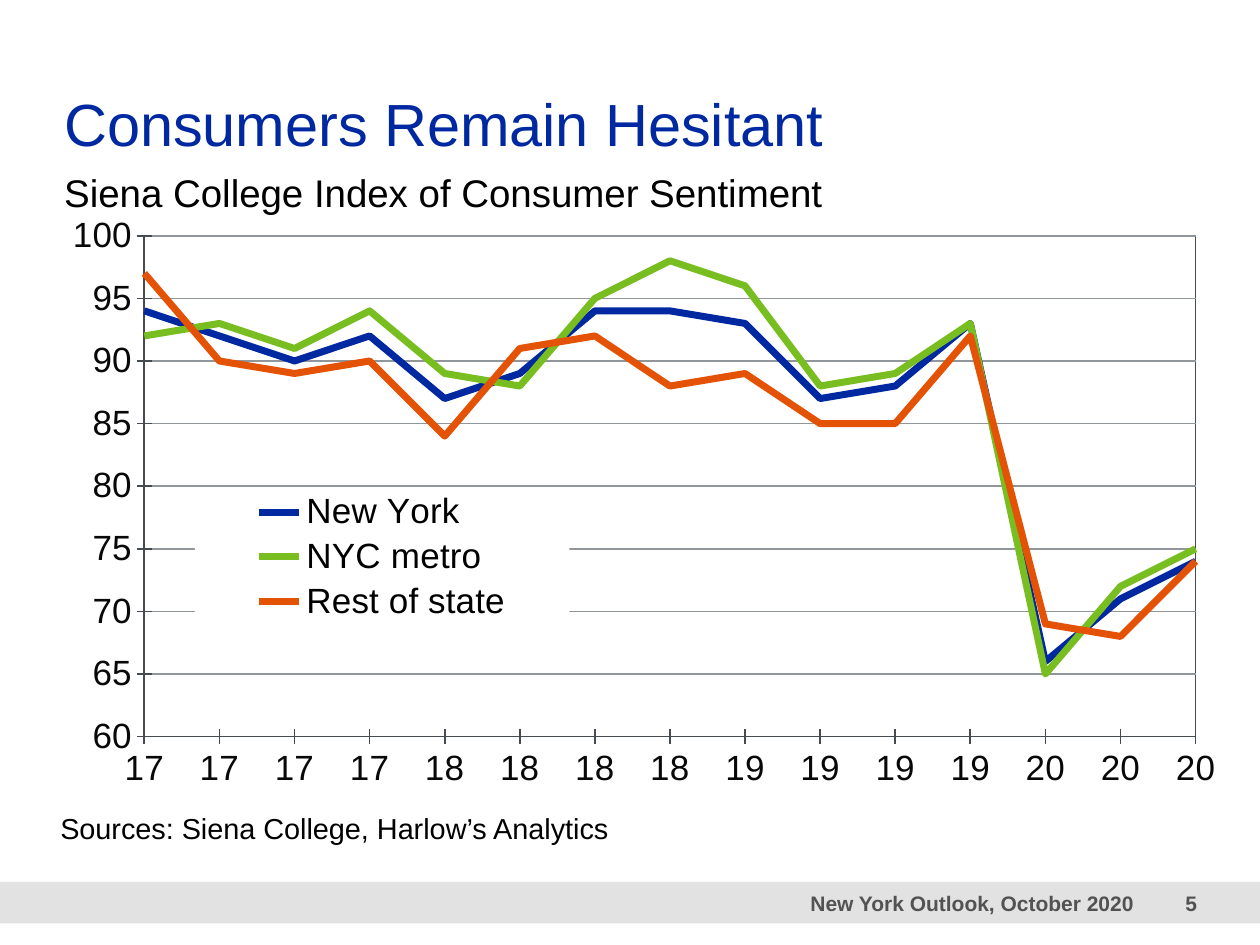
from lxml import etree
from pptx import Presentation
from pptx.chart.data import CategoryChartData
from pptx.dml.color import RGBColor
from pptx.enum.chart import XL_CHART_TYPE, XL_LEGEND_POSITION, XL_MARKER_STYLE, XL_TICK_LABEL_POSITION, XL_TICK_MARK
from pptx.enum.shapes import MSO_SHAPE
from pptx.enum.text import MSO_ANCHOR, PP_ALIGN
from pptx.oxml import parse_xml
from pptx.oxml.ns import nsdecls, qn
from pptx.util import Pt

LINE = XL_CHART_TYPE.LINE
LEGEND_RIGHT = XL_LEGEND_POSITION.RIGHT
NO_MARKER = XL_MARKER_STYLE.NONE
LABELS_LOW = XL_TICK_LABEL_POSITION.LOW
CROSS = XL_TICK_MARK.CROSS
RECTANGLE = MSO_SHAPE.RECTANGLE
TOP, MIDDLE, BOTTOM = MSO_ANCHOR.TOP, MSO_ANCHOR.MIDDLE, MSO_ANCHOR.BOTTOM
LEFT, RIGHT = PP_ALIGN.LEFT, PP_ALIGN.RIGHT

FONT = "Arial"
COLORS = {
    "blue": "0028A0",
    "green": "78BE20",
    "orange": "E35205",
    "black": "000000",
    "label": "080808",
    "axis": "464B50",
    "grid": "91969B",
    "band": "E2E2E2",
    "footer": "525252",
    "white": "FFFFFF",
}
QUARTERS = ["17"] * 4 + ["18"] * 4 + ["19"] * 4 + ["20"] * 3
SENTIMENT = [
    ("New York", "blue", [94, 92, 90, 92, 87, 89, 94, 94, 93, 87, 88, 93, 66, 71, 74]),
    ("NYC metro", "green", [92, 93, 91, 94, 89, 88, 95, 98, 96, 88, 89, 93, 65, 72, 75]),
    ("Rest of state", "orange", [97, 90, 89, 90, 84, 91, 92, 88, 89, 85, 85, 92, 69, 68, 74]),
]


def rgb(name):
    return RGBColor.from_string(COLORS[name])


def style_font(font, size, color, bold=False):
    font.name = FONT
    font.size = Pt(size)
    font.bold = bold
    font.color.rgb = rgb(color)


def style_line(line, color, width):
    line.color.rgb = rgb(color)
    line.width = Pt(width)


def add_text(slide, box, text, size, color, anchor=TOP, align=LEFT, bold=False):
    frame = slide.shapes.add_textbox(*map(Pt, box)).text_frame
    frame.word_wrap = True
    frame.vertical_anchor = anchor
    frame.margin_left = frame.margin_top = frame.margin_right = frame.margin_bottom = 0
    paragraph = frame.paragraphs[0]
    paragraph.alignment = align
    run = paragraph.add_run()
    run.text = text
    style_font(run.font, size, color, bold)


def add_band(slide, box, color):
    shape = slide.shapes.add_shape(RECTANGLE, *map(Pt, box))
    shape.shadow.inherit = False
    shape.fill.solid()
    shape.fill.fore_color.rgb = rgb(color)
    shape.line.fill.background()


def set_layout(parent, position, index, inner=False):
    for old_layout in parent.findall(qn("c:layout")):
        parent.remove(old_layout)
    layout = parse_xml(f"<c:layout {nsdecls('c')}><c:manualLayout/></c:layout>")
    settings = [("layoutTarget", "inner")] if inner else []
    settings += [("xMode", "edge"), ("yMode", "edge")]
    settings += zip("xywh", position)
    for tag, value in settings:
        etree.SubElement(layout[0], qn(f"c:{tag}")).set("val", str(value))
    parent.insert(index, layout)


def area_format(outline):
    return parse_xml(
        f"<c:spPr {nsdecls('c', 'a')}><a:solidFill><a:srgbClr val=\"{COLORS['white']}\"/></a:solidFill>"
        f"<a:ln>{outline}</a:ln></c:spPr>"
    )


def style_axis(axis):
    axis.major_tick_mark = CROSS
    style_font(axis.tick_labels.font, 20, "label")
    axis.tick_labels.number_format = "#,##0"
    axis.tick_labels.number_format_is_linked = False
    style_line(axis.format.line, "axis", 1)


def style_legend(chart):
    chart.has_legend = True
    chart.legend.position = LEGEND_RIGHT
    chart.legend.include_in_layout = False
    style_font(chart.legend.font, 20, "black")
    legend = chart.element.find(".//" + qn("c:legend"))
    set_layout(legend, (0.12, 0.46, 0.32, 0.23), 1)
    legend.find(qn("c:overlay")).addnext(area_format("<a:noFill/>"))


def style_plot_area(chart):
    plot_area = chart.element.find(".//" + qn("c:plotArea"))
    set_layout(plot_area, (0.077, 0.046, 0.898, 0.825), 0, inner=True)
    border = f"<a:solidFill><a:srgbClr val=\"{COLORS['axis']}\"/></a:solidFill>"
    plot_area.append(area_format(border))
    value_axis = plot_area.find(qn("c:valAx"))
    for old_setting in value_axis.findall(qn("c:crossBetween")):
        value_axis.remove(old_setting)
    value_axis.find(qn("c:crosses")).addnext(
        parse_xml(f'<c:crossBetween {nsdecls("c")} val="midCat"/>')
    )


def add_sentiment_chart(slide, box):
    data = CategoryChartData(number_format="#,##0")
    data.categories = QUARTERS
    for name, _, values in SENTIMENT:
        data.add_series(name, values)
    chart = slide.shapes.add_chart(LINE, *map(Pt, box), data).chart
    chart.has_title = False
    style_font(chart.font, 10, "blue")
    chart.plots[0].vary_by_categories = False
    for series, (_, color, _) in zip(chart.plots[0].series, SENTIMENT):
        series.smooth = False
        series.marker.style = NO_MARKER
        style_line(series.format.line, color, 4)
    style_axis(chart.category_axis)
    chart.category_axis.tick_label_position = LABELS_LOW
    value_axis = chart.value_axis
    style_axis(value_axis)
    value_axis.minimum_scale = 60
    value_axis.maximum_scale = 100
    value_axis.major_unit = 5
    value_axis.has_major_gridlines = True
    style_line(value_axis.major_gridlines.format.line, "grid", 1)
    style_legend(chart)
    style_plot_area(chart)


def main():
    presentation = Presentation()
    presentation.slide_width = Pt(720)
    presentation.slide_height = Pt(540)
    slide = presentation.slides.add_slide(presentation.slide_layouts[6])
    add_band(slide, (0, 504, 720, 23.76), "band")
    add_text(slide, (328, 504, 320, 23.76), "New York Outlook, October 2020", 12, "footer", MIDDLE, RIGHT, True)
    add_text(slide, (648, 504, 36, 23.76), "5", 12, "footer", MIDDLE, RIGHT, True)
    add_sentiment_chart(slide, (31, 118.8, 669, 347))
    add_text(slide, (36.7, 49.7, 648, 41), "Consumers Remain Hesitant", 34, "blue")
    add_text(slide, (34.5, 463, 654, 20), "Sources: Siena College, Harlow’s Analytics", 16.5, "black", BOTTOM)
    add_text(slide, (36.7, 96.5, 648, 37.4), "Siena College Index of Consumer Sentiment", 22, "black")
    presentation.save("out.pptx")


if __name__ == "__main__":
    main()
